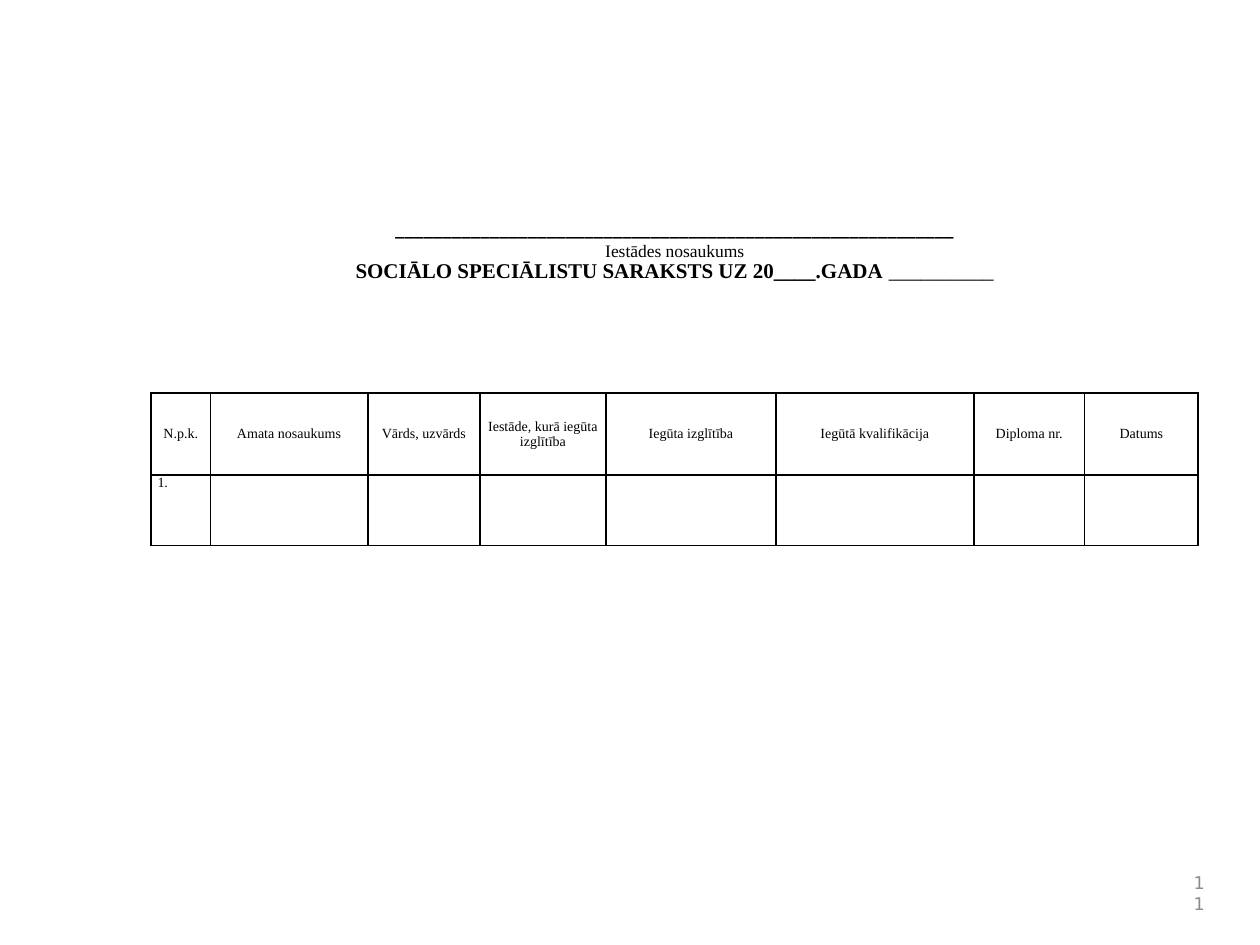
import pptx
import pptx.util
import pptx.dml.color
import pptx.enum.text
import pptx.oxml
from pptx.oxml.ns import nsdecls

Inches, Pt = pptx.util.Inches, pptx.util.Pt
ALIGN = pptx.enum.text.PP_ALIGN
ANCHOR = pptx.enum.text.MSO_ANCHOR

THEME = {
    "serif": "Times New Roman", "sans": "Roboto", "mono": "DejaVu Sans",
    "ink": "000000", "grey": "8C8C8C",
    "head": 12, "sub": 10, "cell": 8, "num": 10, "rule": 1,
}

# Title lines, each a list of (text, font, size, bold)
TITLE = [
    [("_" * 59, "sans", "head", False)],
    [("Iestādes nosaukums", "serif", "sub", False)],
    [("SOCIĀLO SPECIĀLISTU SARAKSTS UZ 20____.GADA", "serif", "head", True),
     (" __________", "serif", "head", False)],
]
COLS = [
    ("N.p.k.", 0.47), ("Amata nosaukums", 1.25), ("Vārds, uzvārds", 0.89),
    ("Iestāde, kurā iegūta izglītība", 1), ("Iegūta izglītība", 1.35),
    ("Iegūtā kvalifikācija", 1.57), ("Diploma nr.", 0.88), ("Datums", 0.9),
]
ROWS = [([name for name, _ in COLS], 0.65),
        (["1."] + [""] * (len(COLS) - 1), 0.56)]
NUMBER = "11"


def style(font, face, size, color="ink", bold=False):
    font.name = THEME[face]
    font.size = Pt(THEME[size])
    font.bold = bold
    font.color.rgb = pptx.dml.color.RGBColor.from_string(THEME[color])


def add_title(slide):
    box = slide.shapes.title
    box.left, box.top, box.width, box.height = map(Inches, (2.1, 1.68, 6.51, 0.87))
    frame = box.text_frame
    frame.word_wrap = True
    frame.auto_size = pptx.enum.text.MSO_AUTO_SIZE.NONE
    frame.vertical_anchor = ANCHOR.TOP
    frame.margin_top = Inches(0.06)
    para = frame.paragraphs[0]
    para.alignment = ALIGN.CENTER
    para.line_spacing = 0.9
    for i, line in enumerate(TITLE):
        if i:
            para.add_line_break()
        for text, face, size, bold in line:
            run = para.add_run()
            run.text = text
            style(run.font, face, size, bold=bold)


def add_borders(cell):
    props = cell._tc.get_or_add_tcPr()
    for side in "LRTB":
        props.append(pptx.oxml.parse_xml(
            f'<a:ln{side} {nsdecls("a")} w="{Pt(THEME["rule"])}"><a:solidFill>'
            f'<a:srgbClr val="{THEME["ink"]}"/></a:solidFill></a:ln{side}>'))


def add_list(slide):
    width = sum(w for _, w in COLS)
    height = sum(h for _, h in ROWS)
    table = slide.shapes.add_table(
        len(ROWS), len(COLS), Inches(1.2), Inches(3.12),
        Inches(width), Inches(height)).table
    table.first_row = table.horz_banding = False
    for col, (_, w) in zip(table.columns, COLS):
        col.width = Inches(w)
    for r, (texts, h) in enumerate(ROWS):
        table.rows[r].height = Inches(h)
        for c, text in enumerate(texts):
            cell = table.cell(r, c)
            add_borders(cell)
            cell.fill.background()
            cell.margin_left = cell.margin_right = Inches(0.05)
            cell.margin_top = cell.margin_bottom = 0
            cell.vertical_anchor = ANCHOR.TOP if r else ANCHOR.MIDDLE
            para = cell.text_frame.paragraphs[0]
            para.text = text
            para.alignment = ALIGN.LEFT if r else ALIGN.CENTER
            for run in para.runs:
                style(run.font, "serif", "cell")


def add_number(slide):
    side = Inches(0.33)
    frame = slide.shapes.add_textbox(Inches(9.33), Inches(6.92), side, side).text_frame
    frame.word_wrap = True
    frame.vertical_anchor = ANCHOR.MIDDLE
    para = frame.paragraphs[0]
    para.text = NUMBER
    para.alignment = ALIGN.RIGHT
    style(para.runs[0].font, "mono", "num", "grey")


def main():
    deck = pptx.Presentation()
    deck.slide_width, deck.slide_height = Inches(10), Inches(7.5)
    slide = deck.slides.add_slide(deck.slide_layouts.get_by_name("Title Only"))
    add_list(slide)
    add_number(slide)
    add_title(slide)
    deck.save("out.pptx")


if __name__ == "__main__":
    main()
